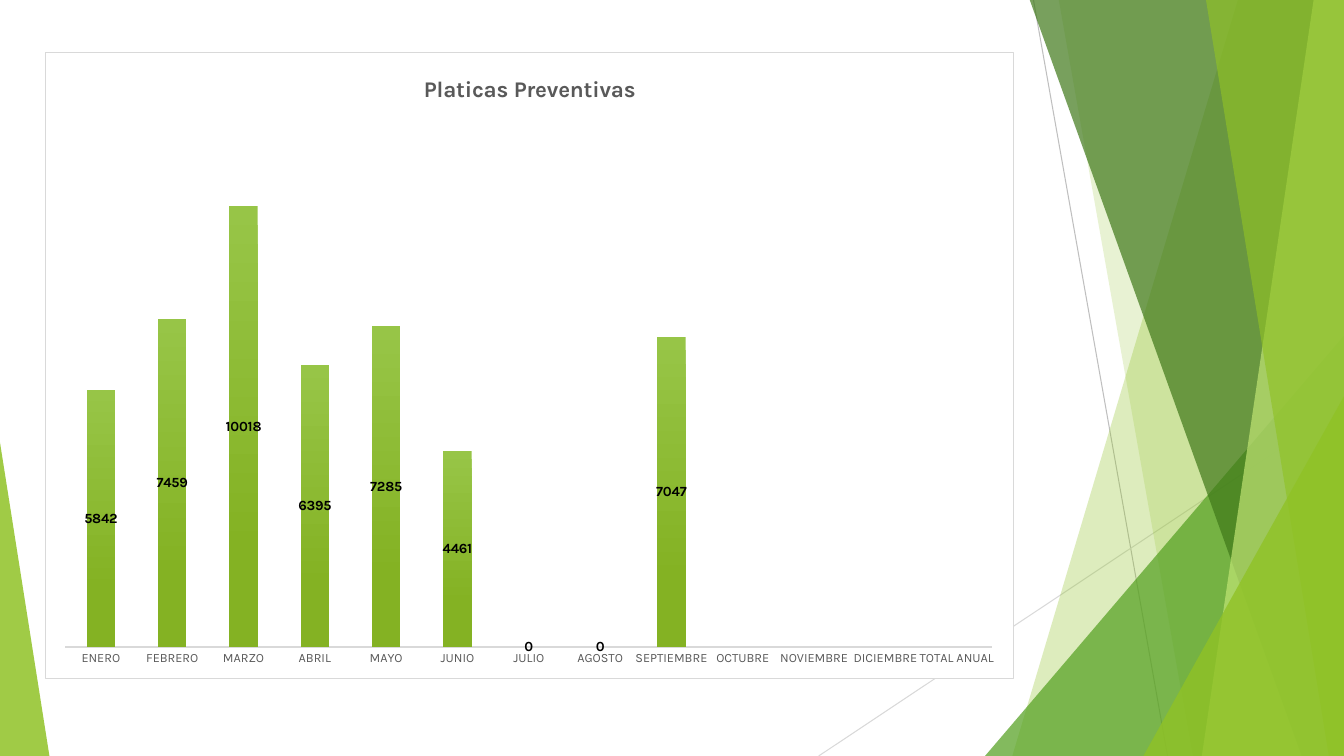
from lxml import etree
from pptx import Presentation
from pptx.chart.data import CategoryChartData
from pptx.dml.color import RGBColor
from pptx.enum.chart import XL_CHART_TYPE, XL_LABEL_POSITION, XL_TICK_MARK
from pptx.enum.shapes import MSO_CONNECTOR, MSO_SHAPE
from pptx.oxml import parse_xml
from pptx.oxml.ns import nsdecls, qn
from pptx.util import Inches, Pt

STACKED = XL_CHART_TYPE.COLUMN_STACKED
CENTER = XL_LABEL_POSITION.CENTER
NO_TICK = XL_TICK_MARK.NONE
STRAIGHT = MSO_CONNECTOR.STRAIGHT
TRIANGLE = MSO_SHAPE.ISOSCELES_TRIANGLE

LIME = RGBColor(0x90, 0xC2, 0x26)
PALE_LIME = RGBColor(0xC0, 0xE4, 0x74)
GREEN = RGBColor(0x54, 0xA0, 0x21)
DARK_GREEN = RGBColor(0x3F, 0x78, 0x19)
BAR_TOP = RGBColor(0x97, 0xC5, 0x47)
BAR_BOTTOM = RGBColor(0x84, 0xB2, 0x23)
GRAY = RGBColor(0xBF, 0xBF, 0xBF)
LIGHT_GRAY = RGBColor(0xD9, 0xD9, 0xD9)
TEXT_GRAY = RGBColor(0x59, 0x59, 0x59)
BLACK = RGBColor(0, 0, 0)

FONT = "Karla"
WIDTH, HEIGHT = 13.33, 7.5
BAND_TOP = -0.01

TITLE = "Platicas Preventivas"
TALKS = [
    ("ENERO", 5842), ("FEBRERO", 7459), ("MARZO", 10018), ("ABRIL", 6395),
    ("MAYO", 7285), ("JUNIO", 4461), ("JULIO", 0), ("AGOSTO", 0),
    ("SEPTIEMBRE", 7047), ("OCTUBRE", None), ("NOVIEMBRE", None),
    ("DICIEMBRE", None), ("TOTAL ANUAL", None),
]
CHART_BOX = (0.45, 0.52, 9.61, 6.22)
PLOT_LAYOUT = {"x": 0.02, "y": 0.105, "w": 0.958, "h": 0.844}

RAYS = [
    ((10.25, 0), (11.58, HEIGHT), GRAY),
    ((WIDTH, 4.03), (8.12, HEIGHT), LIGHT_GRAY),
]
FACETS = [
    ("band", 12.28, 10.04, LIME, 30),
    ("band", 10.5, 11.83, LIME, 20),
    ("corner", (9.77, 3.33, 3.56), 1, GREEN, 72),
    ("band", 10.21, 12.91, DARK_GREEN, 70),
    ("band", 13.03, 11.92, PALE_LIME, 70),
    ("band", 11.96, 13.18, LIME, 65),
    ("corner", (11.34, 3.93, 1.99), 1, LIME, 80),
    ("corner", (0, 4.39, 0.49), 0, LIME, 85),
]


def add_ray(slide, start, end, color):
    ray = slide.shapes.add_connector(
        STRAIGHT, *(Inches(v) for v in start + end))
    ray.line.color.rgb = color
    ray.line.width = Pt(0.75)
    etree.SubElement(ray.element.spPr, qn("a:effectLst"))


def add_band(slide, top_x, bottom_x):
    outline = slide.shapes.build_freeform(
        Inches(top_x), Inches(BAND_TOP), scale=1.0)
    corners = [(WIDTH, BAND_TOP), (WIDTH, HEIGHT), (bottom_x, HEIGHT)]
    outline.add_line_segments(
        [(Inches(x), Inches(y)) for x, y in corners], close=True)
    return outline.convert_to_shape()


def add_corner(slide, box, apex):
    left, top, width = box
    corner = slide.shapes.add_shape(
        TRIANGLE, Inches(left), Inches(top), Inches(width), Inches(HEIGHT - top))
    corner.adjustments[0] = apex
    return corner


def paint(facet, color, opacity):
    facet.shadow.inherit = False
    facet.line.fill.background()
    facet.fill.solid()
    facet.fill.fore_color.rgb = color
    tint = facet.element.spPr.find(qn("a:solidFill"))[0]
    etree.SubElement(tint, qn("a:alpha")).set("val", str(opacity * 1000))


def style(font, size, color, bold=False):
    font.name = FONT
    font.size = Pt(size)
    font.color.rgb = color
    font.bold = bold


def add_talks_chart(slide):
    talks = CategoryChartData()
    talks.categories = [month for month, _ in TALKS]
    talks.add_series("Series 1", [count for _, count in TALKS])
    chart = slide.shapes.add_chart(
        STACKED, *(Inches(v) for v in CHART_BOX), talks).chart
    style(chart.font, 10, BLACK)
    chart.has_legend = False
    chart.has_title = True
    heading = chart.chart_title.text_frame.paragraphs[0].add_run()
    heading.text = TITLE
    style(heading.font, 16, TEXT_GRAY, True)

    months = chart.category_axis
    months.major_tick_mark = NO_TICK
    months.format.line.color.rgb = LIGHT_GRAY
    months.format.line.width = Pt(1)
    style(months.tick_labels.font, 9, TEXT_GRAY)
    counts = chart.value_axis
    counts.visible = False
    counts.has_major_gridlines = False
    counts.minimum_scale = 0
    counts.maximum_scale = 12000

    plot = chart.plots[0]
    plot.gap_width = 150
    plot.overlap = 100
    plot.vary_by_categories = False
    bars = plot.series[0]
    fill = bars.format.fill
    fill.gradient()
    fill.gradient_angle = 270
    for stop, color, position in zip(
            fill.gradient_stops, (BAR_TOP, BAR_BOTTOM), (0, 0.78)):
        stop.color.rgb = color
        stop.position = position
    labels = bars.data_labels
    labels.show_value = True
    labels.position = CENTER
    style(labels.font, 10, BLACK, True)

    body = chart.element.find(qn("c:chart"))
    plot_area = body.find(qn("c:plotArea"))
    for automatic in plot_area.findall(qn("c:layout")):
        plot_area.remove(automatic)
    sizes = "".join(
        f'<c:{key} val="{value}"/>' for key, value in PLOT_LAYOUT.items())
    plot_area.insert(0, parse_xml(
        f'<c:layout {nsdecls("c")}><c:manualLayout>'
        '<c:layoutTarget val="inner"/><c:xMode val="edge"/>'
        f'<c:yMode val="edge"/>{sizes}</c:manualLayout></c:layout>'))
    body.addnext(parse_xml(
        f'<c:spPr {nsdecls("c", "a")}>'
        '<a:solidFill><a:srgbClr val="FFFFFF"/></a:solidFill>'
        f'<a:ln w="{Pt(0.75)}"><a:solidFill><a:srgbClr val="{LIGHT_GRAY}"/>'
        '</a:solidFill></a:ln></c:spPr>'))


def main():
    deck = Presentation()
    deck.slide_width = Inches(WIDTH)
    deck.slide_height = Inches(HEIGHT)
    slide = deck.slides.add_slide(deck.slide_layouts[6])
    for start, end, color in RAYS:
        add_ray(slide, start, end, color)
    builders = {"band": add_band, "corner": add_corner}
    for kind, place, lean, color, opacity in FACETS:
        paint(builders[kind](slide, place, lean), color, opacity)
    add_talks_chart(slide)
    deck.save("out.pptx")


if __name__ == "__main__":
    main()
